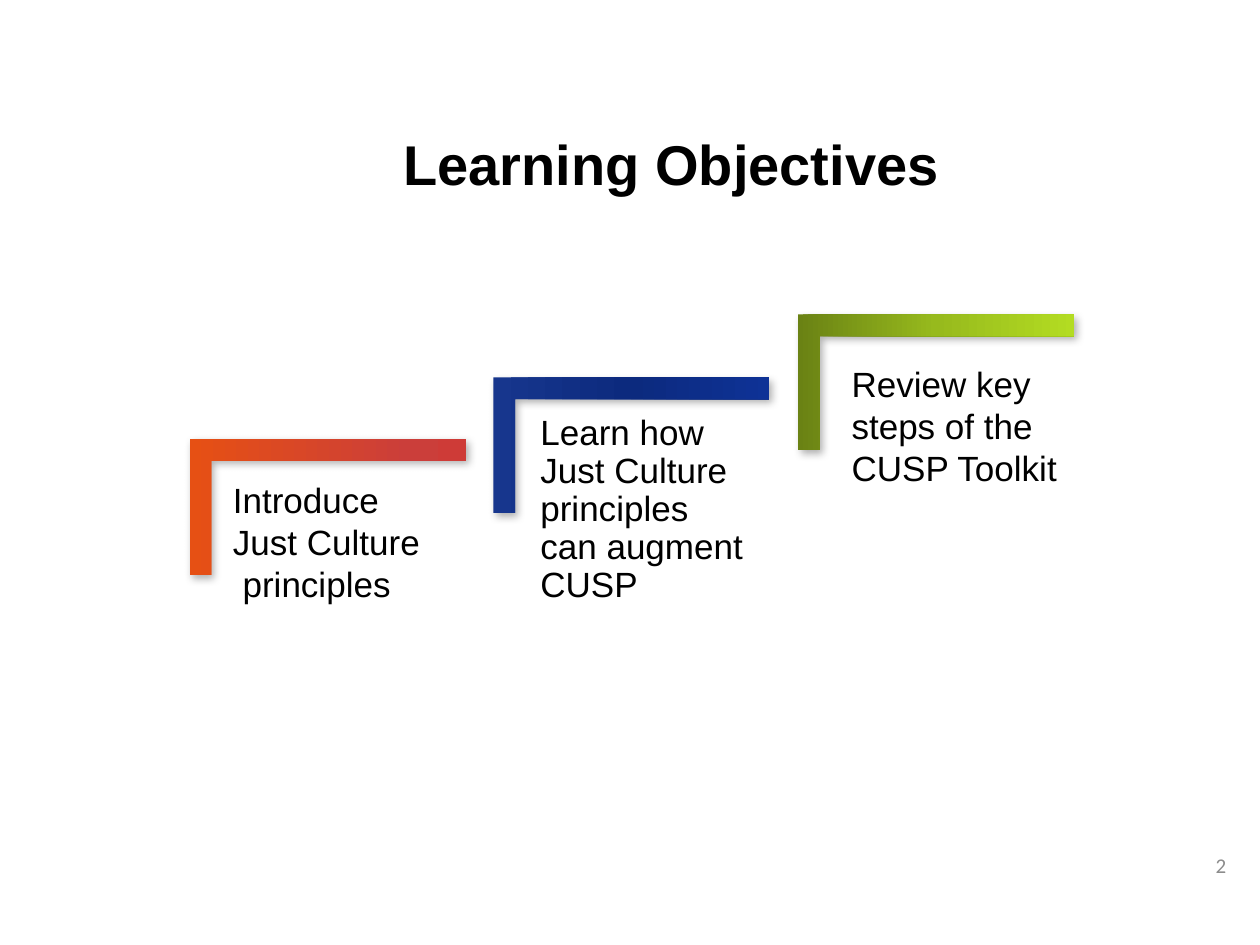
from dataclasses import dataclass

from lxml import etree
from pptx import Presentation
from pptx.dml.color import RGBColor
from pptx.enum.shapes import MSO_SHAPE as Shape
from pptx.enum.text import MSO_ANCHOR as Anchor, PP_ALIGN as Align
from pptx.oxml import parse_xml
from pptx.oxml.ns import nsdecls, qn
from pptx.slide import Slide
from pptx.util import Inches, Pt

COLORS = {
    "text": "000000",
    "number": "8C8C8C",
    "shadow": "000000",
    "orange": "E65014",
    "red": "CB3E3A",
    "red_end": "CE3B37",
    "blue": "17368D",
    "navy": "0C2A7E",
    "blue_end": "0E3296",
    "olive": "6A8214",
    "green": "97BA1D",
    "lime": "B3DC22",
}
BRACKET_SIZE = (1.08, 2.19)
BRACKET_THICKNESS = 0.16


@dataclass
class Label:
    text: str
    left: float
    top: float
    width: float
    height: float
    size: int = 20
    font: str = "Arial"
    color: str = "text"
    bold: bool = False
    align: Align = Align.LEFT
    anchor: Anchor = Anchor.TOP
    line_spacing: float = 1.0


@dataclass
class Objective:
    left: float
    top: float
    stops: tuple[tuple[int, str], ...]
    label: Label


TITLE = Label("Learning Objectives", 0.83, 0.67, 9, 1.25, size=32, bold=True,
              align=Align.CENTER, anchor=Anchor.MIDDLE)
PAGE_NUMBER = Label("2", 7.5, 6.67, 2.33, 0.4, size=12, font="Calibri",
                    color="number", align=Align.RIGHT, anchor=Anchor.MIDDLE)
OBJECTIVES = [
    Objective(2.06, 2.93, ((0, "orange"), (80, "red"), (100, "red_end")),
              Label("Introduce Just Culture  principles", 1.75, 3.75, 1.75, 1.11)),
    Objective(4.47, 2.44, ((0, "blue"), (50, "navy"), (100, "blue_end")),
              Label("Learn how Just Culture principles can augment CUSP",
                    4.19, 3.25, 1.85, 1.92, line_spacing=0.9)),
    Objective(6.89, 1.94, ((0, "olive"), (50, "green"), (100, "lime")),
              Label("Review key steps of the CUSP Toolkit", 6.66, 2.83, 2.21, 1.11)),
]


def add_label(page: Slide, label: Label) -> None:
    box = page.shapes.add_textbox(Inches(label.left), Inches(label.top),
                                  Inches(label.width), Inches(label.height))
    frame = box.text_frame
    frame.word_wrap = True
    frame.vertical_anchor = label.anchor
    para = frame.paragraphs[0]
    para.alignment = label.align
    para.line_spacing = label.line_spacing
    span = para.add_run()
    span.text = label.text
    span.font.name = label.font
    span.font.size = Pt(label.size)
    span.font.bold = label.bold
    span.font.color.rgb = RGBColor.from_string(COLORS[label.color])


def gradient_fill(stops: tuple[tuple[int, str], ...]) -> etree.ElementBase:
    stop_xml = "".join(
        f'<a:gs pos="{position * 1000}"><a:srgbClr val="{COLORS[color]}"/></a:gs>'
        for position, color in stops
    )
    return parse_xml(
        f'<a:gradFill {nsdecls("a")} rotWithShape="1"><a:gsLst>{stop_xml}</a:gsLst>'
        f'<a:lin ang="{270 * 60000}" scaled="0"/></a:gradFill>'
    )


def drop_shadow() -> etree.ElementBase:
    return parse_xml(
        f'<a:effectLst {nsdecls("a")}><a:outerShdw blurRad="{Pt(4.5)}" '
        f'dist="{Pt(2.6)}" dir="{53 * 60000}" algn="ctr" rotWithShape="0">'
        f'<a:srgbClr val="{COLORS["shadow"]}"><a:alpha val="30000"/></a:srgbClr>'
        '</a:outerShdw></a:effectLst>'
    )


def add_bracket(page: Slide, objective: Objective) -> None:
    width, height = BRACKET_SIZE
    bracket = page.shapes.add_shape(Shape.CORNER, Inches(objective.left),
                                    Inches(objective.top), Inches(width), Inches(height))
    bracket.rotation = 90
    for index in range(2):
        bracket.adjustments[index] = BRACKET_THICKNESS
    bracket.line.fill.background()
    properties = bracket._element.spPr
    properties.find(qn("a:prstGeom")).addnext(gradient_fill(objective.stops))
    properties.append(drop_shadow())


def main() -> None:
    deck = Presentation()
    deck.slide_width = Inches(10)
    deck.slide_height = Inches(7.5)
    page = deck.slides.add_slide(deck.slide_layouts[6])
    add_label(page, TITLE)
    for objective in OBJECTIVES:
        add_bracket(page, objective)
    for objective in OBJECTIVES:
        add_label(page, objective.label)
    add_label(page, PAGE_NUMBER)
    deck.save("out.pptx")


if __name__ == "__main__":
    main()
